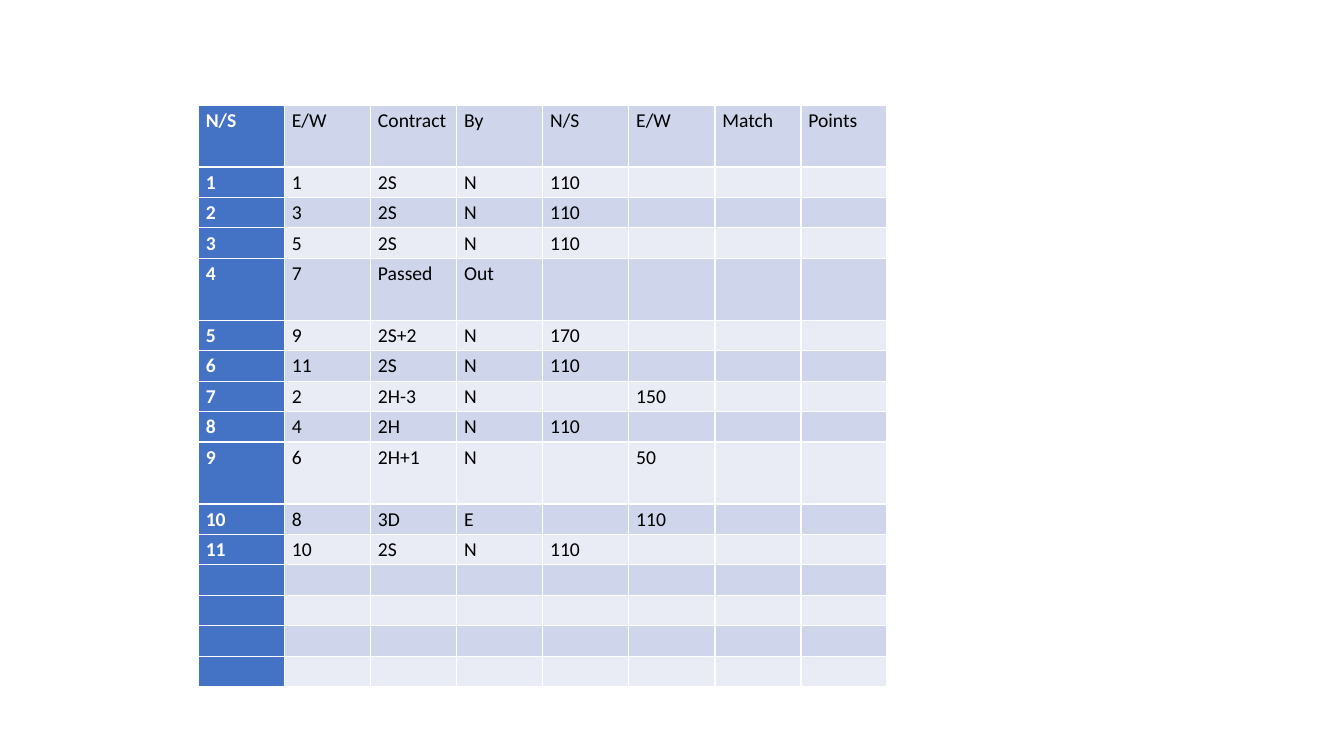
from lxml import etree
from pptx import Presentation
from pptx import util as u
from pptx.dml.color import RGBColor
from pptx.oxml import ns

PX = 9525  # EMU per px on a 1280 x 720 slide

HANDS = [
    ["N/S", "E/W", "Contract", "By", "N/S", "E/W", "Match", "Points"],
    ["1", "1", "2S", "N", "110"],
    ["2", "3", "2S", "N", "110"],
    ["3", "5", "2S", "N", "110"],
    ["4", "7", "Passed", "Out"],
    ["5", "9", "2S+2", "N", "170"],
    ["6", "11", "2S", "N", "110"],
    ["7", "2", "2H-3", "N", "", "150"],
    ["8", "4", "2H", "N", "110"],
    ["9", "6", "2H+1", "N", "", "50"],
    ["10", "8", "3D", "E", "", "110"],
    ["11", "10", "2S", "N", "110"],
    [], [], [], [],
]
TALL_ROWS = {0, 4, 9}


def px(length):
    return u.Emu(length * PX)


def color(hex_code):
    return RGBColor.from_string(hex_code)


class ScoreSlide:
    font, size, spacing = "Calibri", u.Pt(14), 1.15
    pair_fill, bands = "4472C4", ("CFD5EA", "E9EBF5")
    pair_text, body_text, grid = "FFFFFF", "000000", "FFFFFF"

    def __init__(self, prs):
        self.slide = prs.slides.add_slide(prs.slide_layouts[6])

    def table(self, left, top, column_width, heights, rows):
        columns = len(rows[0])
        frame = self.slide.shapes.add_table(
            len(rows), columns, px(left), px(top),
            px(column_width * columns), px(sum(heights)))
        scores = frame.table
        scores.first_col = True
        for column in scores.columns:
            column.width = px(column_width)
        for r, (values, height) in enumerate(zip(rows, heights)):
            scores.rows[r].height = px(height)
            padded = values + [""] * (columns - len(values))
            for c, value in enumerate(padded):
                fill = self.bands[r % 2] if c else self.pair_fill
                self.cell(scores.cell(r, c), value, fill, is_pair=c == 0)

    def cell(self, cell, value, fill, is_pair):
        cell.margin_left = cell.margin_right = px(7)
        cell.margin_top = cell.margin_bottom = 0
        self.borders(cell)
        cell.fill.solid()
        cell.fill.fore_color.rgb = color(fill)
        cell.text_frame.text = value
        paragraph = cell.text_frame.paragraphs[0]
        paragraph.line_spacing = self.spacing
        for run in paragraph.runs:
            run.font.name = self.font
            run.font.size = self.size
            run.font.bold = is_pair
            run.font.color.rgb = color(self.pair_text if is_pair else self.body_text)
        if not value:
            # Keep an empty cell from stretching its row
            end = etree.SubElement(paragraph._p, ns.qn("a:endParaRPr"))
            end.set("sz", str(int(self.size.pt * 100)))

    def borders(self, cell):
        properties = cell._tc.get_or_add_tcPr()
        for side in ("lnL", "lnR", "lnT", "lnB"):
            line = etree.SubElement(properties, ns.qn(f"a:{side}"), w=str(u.Pt(1)))
            solid = etree.SubElement(line, ns.qn("a:solidFill"))
            etree.SubElement(solid, ns.qn("a:srgbClr"), val=self.grid)


def main():
    prs = Presentation()
    prs.slide_width, prs.slide_height = px(1280), px(720)

    # Score sheet: one row per pair, with room for late entries
    heights = [59 if r in TALL_ROWS else 29 for r in range(len(HANDS))]
    ScoreSlide(prs).table(189, 100, 82, heights, HANDS)

    prs.save("out.pptx")


if __name__ == "__main__":
    main()
